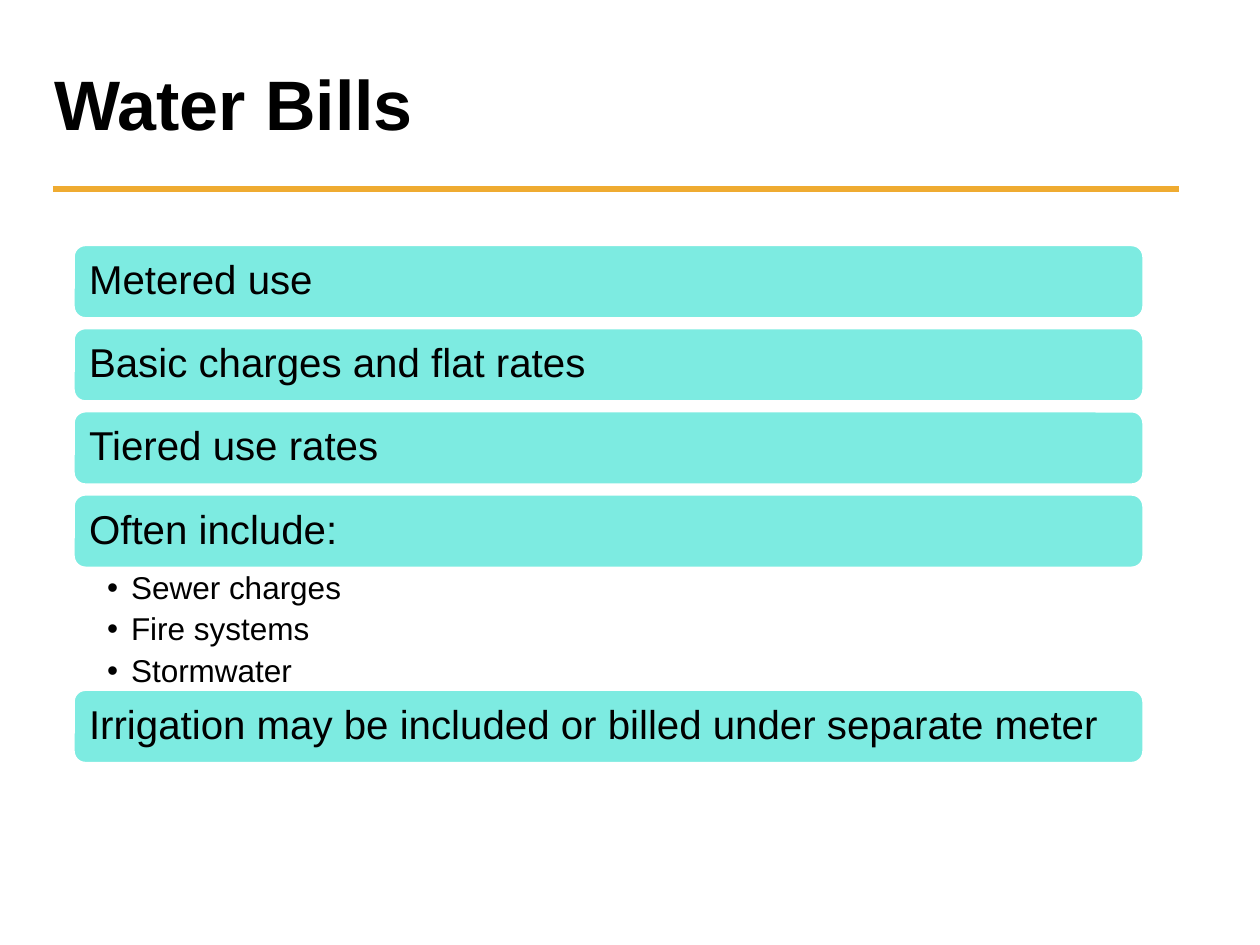
from lxml import etree
from pptx import Presentation
from pptx import util as u
from pptx.dml.color import RGBColor
from pptx.enum import shapes, text
from pptx.oxml import ns

BLACK = RGBColor(0x00, 0x00, 0x00)
WHITE = RGBColor(0xFF, 0xFF, 0xFF)
GOLD = RGBColor(0xEF, 0xAB, 0x31)
AQUA = RGBColor(0x7D, 0xEB, 0xE1)
FONT = "Arial"

BAR_HEIGHT = u.Inches(0.59)
BAR_PITCH = u.Inches(0.66)
LIST_HEIGHT = u.Inches(0.96)
BULLET_INDENT = u.Inches(0.19)

# Each bar with the bullets that hang below it
TOPICS = [
    ("Metered use", []),
    ("Basic charges and flat rates", []),
    ("Tiered use rates", []),
    ("Often include:", ["Sewer charges", "Fire systems", "Stormwater"]),
    ("Irrigation may be included or billed under separate meter", []),
]


def place(shape, left, top, width, height):
    shape.left, shape.top, shape.width, shape.height = left, top, width, height


def set_insets(frame, left, top, right, bottom):
    frame.margin_left, frame.margin_top = u.Inches(left), u.Inches(top)
    frame.margin_right, frame.margin_bottom = u.Inches(right), u.Inches(bottom)


def style_paragraph(paragraph, size, bold=False):
    paragraph.alignment = text.PP_ALIGN.LEFT
    font = paragraph.font
    font.name, font.size, font.bold = FONT, u.Pt(size), bold
    font.color.rgb = BLACK


def add_header(slide, left, top, width, height):
    """Title with a gold rule below it."""
    title = slide.shapes.title
    place(title, left, top, width, height)
    frame = title.text_frame
    frame.text = "Water Bills"
    frame.vertical_anchor = text.MSO_ANCHOR.MIDDLE
    style_paragraph(frame.paragraphs[0], 40, bold=True)

    rule_top = top + height + u.Inches(0.15)
    rule = slide.shapes.add_connector(
        shapes.MSO_CONNECTOR.STRAIGHT,
        u.Inches(0.42), rule_top, u.Inches(9.36), rule_top)
    rule.line.color.rgb = GOLD
    rule.line.width = u.Pt(4)
    etree.SubElement(rule._element.spPr, ns.qn("a:effectLst"))


def add_bar(slide, label, left, top, width):
    bar = slide.shapes.add_shape(
        shapes.MSO_SHAPE.ROUNDED_RECTANGLE, left, top, width, BAR_HEIGHT)
    bar.shadow.inherit = False
    bar.fill.solid()
    bar.fill.fore_color.rgb = AQUA
    bar.line.color.rgb = WHITE
    bar.line.width = u.Pt(2)
    frame = bar.text_frame
    frame.text = label
    frame.word_wrap = True
    frame.vertical_anchor = text.MSO_ANCHOR.MIDDLE
    set_insets(frame, 0.1, 0.05, 0.1, 0.05)
    frame.paragraphs[0].line_spacing = 0.9
    style_paragraph(frame.paragraphs[0], 23)


def fill_list(body, items, left, top, width):
    place(body, left, top, width, LIST_HEIGHT)
    frame = body.text_frame
    frame.text = "\n".join(items)
    frame.auto_size = text.MSO_AUTO_SIZE.NONE
    frame.vertical_anchor = text.MSO_ANCHOR.TOP
    set_insets(frame, 0.27, 0.03, 0.18, 0.03)
    for paragraph in frame.paragraphs:
        paragraph.level = 1
        properties = paragraph._p.get_or_add_pPr()
        properties.set("marL", str(BULLET_INDENT))
        properties.set("indent", str(-BULLET_INDENT))
        etree.SubElement(properties, ns.qn("a:buChar"), char="•")
        paragraph.line_spacing = 0.9
        paragraph.space_before = u.Pt(0)
        paragraph.space_after = u.Pt(4.4)
        style_paragraph(paragraph, 18)


def add_topics(slide, left, top, width):
    """Stack of bars; a bulleted list fills the gap below its bar."""
    for label, items in TOPICS:
        add_bar(slide, label, left, top, width)
        if items:
            top += BAR_HEIGHT
            fill_list(slide.placeholders[1], items, left, top, width)
            top += LIST_HEIGHT
        else:
            top += BAR_PITCH


def main():
    presentation = Presentation()
    presentation.slide_width = u.Inches(10)
    presentation.slide_height = u.Inches(7.5)
    slide = presentation.slides.add_slide(presentation.slide_layouts[1])
    add_header(slide, u.Inches(0.33), u.Inches(0.27), u.Inches(7.25), u.Inches(1.08))
    add_topics(slide, u.Inches(0.58), u.Inches(1.94), u.Inches(8.5))
    presentation.save("out.pptx")


if __name__ == "__main__":
    main()
